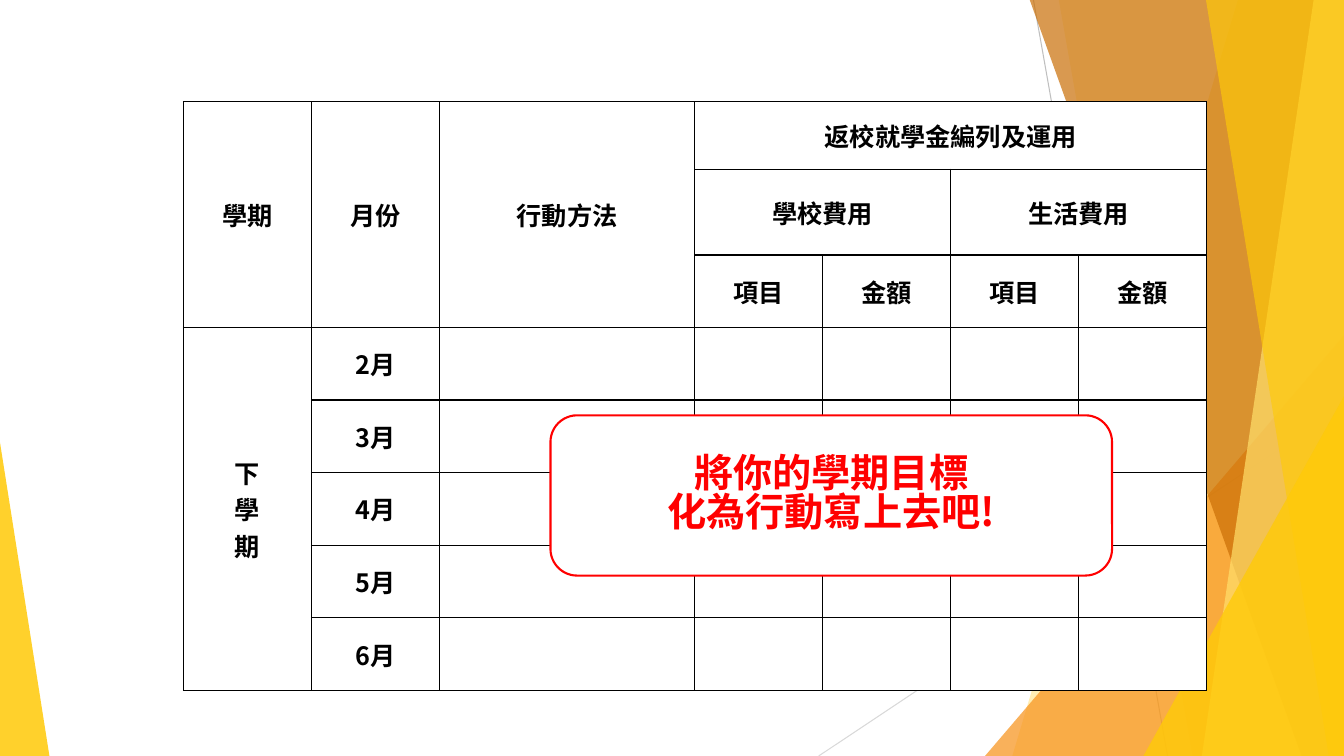
from typing import NamedTuple

from lxml import etree
from pptx import Presentation
from pptx import util as u
from pptx.dml import color
from pptx.enum import shapes, text
from pptx.oxml import ns

FONT = "Noto Sans CJK SC"
WIDTH, HEIGHT = 13.33, 7.5
TOP = -0.01
YELLOW = "FFCA08"


class Ray(NamedTuple):
    start: tuple[float, float]
    end: tuple[float, float]
    line: str


class Band(NamedTuple):
    top_x: float
    bottom_x: float
    fill: str
    opacity: int


class Triangle(NamedTuple):
    left: float
    top: float
    width: float
    apex: float
    fill: str
    opacity: int


class Heading(NamedTuple):
    row: int
    column: int
    label: str
    rows: int = 1
    columns: int = 1


RAYS = [
    Ray((10.25, 0), (11.58, HEIGHT), "BFBFBF"),
    Ray((WIDTH, 4.03), (8.12, HEIGHT), "D9D9D9"),
]
DECORATION = [
    Band(12.28, 10.04, YELLOW, 30),
    Band(10.5, 11.83, YELLOW, 20),
    Triangle(9.77, 3.33, 3.56, 1, "F8931D", 72),
    Band(10.21, 12.91, "CA6F06", 70),
    Band(13.03, 11.92, "FFDF6B", 70),
    Band(11.96, 13.18, YELLOW, 65),
    Triangle(11.34, 3.93, 1.99, 1, YELLOW, 80),
    Triangle(0, 4.39, 0.49, 0, YELLOW, 85),
]
COLUMN_WIDTHS = [1.27, 1.27, 2.53] + [1.27] * 4
ROW_HEIGHTS = [0.67, 0.85] + [0.72] * 6
HEADINGS = [
    Heading(0, 0, "學期", rows=3),
    Heading(0, 1, "月份", rows=3),
    Heading(0, 2, "行動方法", rows=3),
    Heading(0, 3, "返校就學金編列及運用", columns=4),
    Heading(1, 3, "學校費用", columns=2),
    Heading(1, 5, "生活費用", columns=2),
    *(Heading(2, 3 + i, label) for i, label in enumerate(["項目", "金額"] * 2)),
    Heading(3, 0, "下\n學\n期", rows=5),
    *(Heading(month + 1, 1, f"{month}月") for month in range(2, 7)),
]


def rgb(value: str) -> color.RGBColor:
    return color.RGBColor.from_string(value)


def paint(fill, value: str) -> None:
    fill.solid()
    fill.fore_color.rgb = rgb(value)


def paint_translucent(shape, value: str, opacity: int) -> None:
    shape.shadow.inherit = False
    paint(shape.fill, value)
    shape.line.fill.background()
    tint = shape.fill._xPr.find(f".//{ns.qn('a:srgbClr')}")
    etree.SubElement(tint, ns.qn("a:alpha"), val=str(opacity * 1000))


def write(frame, words: str, size: int, value: str, spacing: float = 1.0) -> None:
    frame.text = words
    formats = {"size": u.Pt(size), "bold": True, "name": FONT}
    for para in frame.paragraphs:
        para.alignment = text.PP_ALIGN.CENTER
        para.line_spacing = spacing
        for span in para.runs:
            for name, setting in formats.items():
                setattr(span.font, name, setting)
            span.font.color.rgb = rgb(value)
            latin = span.font._element.find(ns.qn("a:latin"))
            latin.addnext(etree.Element(ns.qn("a:ea"), typeface=FONT))


def draw_ray(page, ray: Ray) -> None:
    ends = [u.Inches(value) for value in ray.start + ray.end]
    connector = page.shapes.add_connector(shapes.MSO_CONNECTOR.STRAIGHT, *ends)
    connector.line.width = u.Pt(0.75)
    connector.line.color.rgb = rgb(ray.line)
    etree.SubElement(connector._element.spPr, ns.qn("a:effectLst"))


def draw_band(page, band: Band) -> None:
    corners = [(band.top_x, TOP), (WIDTH, TOP), (WIDTH, HEIGHT), (band.bottom_x, HEIGHT)]
    points = [(u.Inches(x), u.Inches(y)) for x, y in corners]
    builder = page.shapes.build_freeform(*points[0])
    builder.add_line_segments(points[1:], close=True)
    paint_translucent(builder.convert_to_shape(), band.fill, band.opacity)


def draw_triangle(page, triangle: Triangle) -> None:
    shape = page.shapes.add_shape(
        shapes.MSO_SHAPE.ISOSCELES_TRIANGLE,
        u.Inches(triangle.left), u.Inches(triangle.top),
        u.Inches(triangle.width), u.Inches(HEIGHT - triangle.top),
    )
    shape.adjustments[0] = triangle.apex
    paint_translucent(shape, triangle.fill, triangle.opacity)


def format_cell(cell) -> None:
    properties = cell._tc.get_or_add_tcPr()
    for side in ("lnL", "lnR", "lnT", "lnB"):
        border = etree.SubElement(properties, ns.qn(f"a:{side}"), w=str(u.Pt(1)))
        fill = etree.SubElement(border, ns.qn("a:solidFill"))
        etree.SubElement(fill, ns.qn("a:srgbClr"), val="000000")
    paint(cell.fill, "FFFFFF")
    cell.vertical_anchor = text.MSO_ANCHOR.MIDDLE


def draw_plan(page) -> None:
    table = page.shapes.add_table(
        len(ROW_HEIGHTS), len(COLUMN_WIDTHS), u.Inches(1.82), u.Inches(1.01),
        u.Inches(sum(COLUMN_WIDTHS)), u.Inches(sum(ROW_HEIGHTS)),
    ).table
    table.first_row = table.horz_banding = False
    for column, width in zip(table.columns, COLUMN_WIDTHS):
        column.width = u.Inches(width)
    for row, height in zip(table.rows, ROW_HEIGHTS):
        row.height = u.Inches(height)
    for cell in table.iter_cells():
        format_cell(cell)
    for heading in HEADINGS:
        cell = table.cell(heading.row, heading.column)
        if heading.rows * heading.columns > 1:
            last_row = heading.row + heading.rows - 1
            last_column = heading.column + heading.columns - 1
            cell.merge(table.cell(last_row, last_column))
        write(cell.text_frame, heading.label, 18, "000000")


def draw_callout(page) -> None:
    box = page.shapes.add_shape(
        shapes.MSO_SHAPE.ROUNDED_RECTANGLE,
        u.Inches(5.46), u.Inches(4.12), u.Inches(5.57), u.Inches(1.59),
    )
    box.shadow.inherit = False
    paint(box.fill, "FFFFFF")
    box.line.color.rgb = rgb("FF0000")
    box.line.width = u.Pt(1.5)
    box.text_frame.vertical_anchor = text.MSO_ANCHOR.MIDDLE
    write(box.text_frame, "將你的學期目標\n化為行動寫上去吧!", 28, "FF0000", 0.83)


def main() -> None:
    deck = Presentation()
    deck.slide_width, deck.slide_height = u.Inches(WIDTH), u.Inches(HEIGHT)
    page = deck.slides.add_slide(deck.slide_layouts[6])
    for ray in RAYS:
        draw_ray(page, ray)
    for part in DECORATION:
        if isinstance(part, Band):
            draw_band(page, part)
        else:
            draw_triangle(page, part)
    draw_plan(page)
    draw_callout(page)
    deck.save("out.pptx")


if __name__ == "__main__":
    main()
